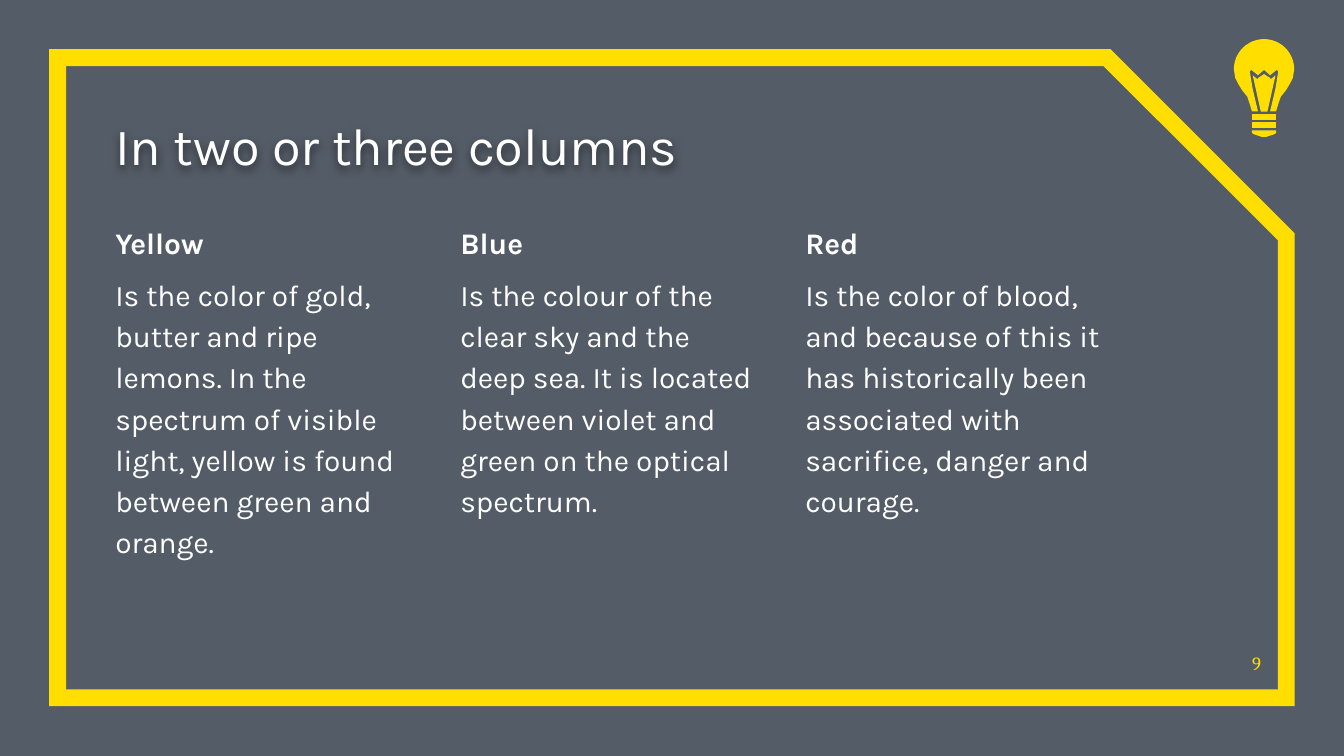
from dataclasses import dataclass
from math import cos, pi, sin

from lxml.etree import SubElement
from pptx import Presentation
from pptx.dml.color import RGBColor
from pptx.enum.shapes import MSO_SHAPE
from pptx.enum.text import MSO_ANCHOR, PP_ALIGN
from pptx.oxml.ns import qn
from pptx.util import Cm, Pt


@dataclass(frozen=True)
class Theme:
    backdrop = RGBColor(0xFF, 0xFF, 0xFF)
    veil = RGBColor(0x04, 0x0F, 0x20)
    veil_opacity = 68
    accent = RGBColor(0xFF, 0xDE, 0x00)
    text = RGBColor(0xFF, 0xFF, 0xFF)
    text_font = "Karla"
    number_font = "Cambria"
    title_size = Pt(28)
    body_size = Pt(16)
    number_size = Pt(10)
    frame_width = Pt(9)


@dataclass(frozen=True)
class Box:
    left: int
    top: int
    width: int
    height: int

    @classmethod
    def cm(cls, *lengths):
        return cls(*(Cm(length) for length in lengths))

    def bounds(self):
        return self.left, self.top, self.width, self.height


THEME = Theme()

COLUMNS = [
    ("Yellow", "Is the color of gold, butter and ripe lemons. In the spectrum of "
               "visible light, yellow is found between green and orange."),
    ("Blue", "Is the colour of the clear sky and the deep sea. It is located "
             "between violet and green on the optical spectrum."),
    ("Red", "Is the color of blood, and because of this it has historically been "
            "associated with sacrifice, danger and courage."),
]

# Left halves of the bulb's parts, on a grid 45 units wide
BULB_WIDTH = 45
RADIUS = BULB_WIDTH / 2
DOME = [(RADIUS - RADIUS * sin(step * pi / 24), RADIUS - RADIUS * cos(step * pi / 24))
        for step in range(13)]
GLASS = DOME + [(1, 29), (3, 33), (6, 38), (10, 43), (12, 49), (13.5, 54), (18, 54),
                (14, 37), (12, 25), (12, 24), (13, 23), (18, 27), (RADIUS, 23)]
FILAMENT = [(RADIUS, 26), (18, 29), (17.5, 30), (17, 29.5), (14, 27), (20, 54)]
BANDS = [[(13.5, top), (13.5, top + 4)] for top in (56, 62)]
CAP = [(13.5, 68), (13.5, 70), (15, 71), (21, 73)]


def set_format(target, values):
    for name, value in values.items():
        setattr(target, name, value)


def format_font(font, color, **values):
    set_format(font, values)
    font.color.rgb = color


def prepare_frame(frame, anchor):
    set_format(frame, dict(margin_left=0, margin_top=0, margin_right=0,
                           margin_bottom=0, word_wrap=True, vertical_anchor=anchor))


def fill_plain(shape, color):
    shape.shadow.inherit = False
    shape.fill.solid()
    shape.fill.fore_color.rgb = color
    shape.line.fill.background()


def add_veil(slide, box):
    """Tint the whole backdrop with a translucent dark layer."""
    veil = slide.shapes.add_shape(MSO_SHAPE.RECTANGLE, *box.bounds())
    fill_plain(veil, THEME.veil)
    tint = next(veil.element.iter(qn("a:srgbClr")))
    SubElement(tint, qn("a:alpha"), val=str(THEME.veil_opacity * 1000))


def add_border(slide, box):
    border = slide.shapes.add_shape(MSO_SHAPE.SNIP_1_RECTANGLE, *box.bounds())
    border.adjustments[0] = 0.28
    border.shadow.inherit = False
    border.fill.background()
    border.line.color.rgb = THEME.accent
    border.line.width = THEME.frame_width
    SubElement(border.element.spPr.find(qn("a:ln")), qn("a:miter"), lim="800000")


def place_title(slide, box, wording):
    title = slide.shapes.title
    title.element.getparent().append(title.element)  # in front of the backdrop
    set_format(title, dict(zip(("left", "top", "width", "height"), box.bounds())))
    title.text_frame.text = wording
    prepare_frame(title.text_frame, MSO_ANCHOR.BOTTOM)
    heading = title.text_frame.paragraphs[0]
    heading.alignment = PP_ALIGN.LEFT
    format_font(heading.font, THEME.text, name=THEME.text_font, size=THEME.title_size)
    effects = SubElement(title.element.spPr, qn("a:effectLst"))
    shadow = SubElement(effects, qn("a:outerShdw"), blurRad=str(Pt(4.5)),
                        dist=str(Pt(1.5)), dir="5400000", algn="bl", rotWithShape="0")
    shade = SubElement(shadow, qn("a:srgbClr"), val="000000")
    SubElement(shade, qn("a:alpha"), val="50000")


def add_column(slide, box, heading, description):
    frame = slide.shapes.add_textbox(*box.bounds()).text_frame
    prepare_frame(frame, MSO_ANCHOR.TOP)
    frame.text = f"{heading}\n{description}"
    for paragraph, bold in zip(frame.paragraphs, (True, False)):
        paragraph.line_spacing = 1.15
        format_font(paragraph.font, THEME.text, name=THEME.text_font,
                    size=THEME.body_size, bold=bold)
    frame.paragraphs[1].space_before = Pt(6)


def add_columns(slide, box, columns, gap):
    width = (box.width - gap * (len(columns) - 1)) // len(columns)
    for index, (heading, description) in enumerate(columns):
        left = box.left + index * (width + gap)
        add_column(slide, Box(left, box.top, width, box.height), heading, description)


def add_page_number(slide, box, number):
    frame = slide.shapes.add_textbox(*box.bounds()).text_frame
    prepare_frame(frame, MSO_ANCHOR.BOTTOM)
    frame.text = number
    frame.paragraphs[0].alignment = PP_ALIGN.RIGHT
    format_font(frame.paragraphs[0].font, THEME.accent, name=THEME.number_font,
                size=THEME.number_size)


def add_bulb(slide, box):
    """Draw each bulb part from its left half and the mirror image of it."""
    unit = box.width / BULB_WIDTH
    for half in (*BANDS, CAP, FILAMENT, GLASS):
        outline = half + [(BULB_WIDTH - x, y) for x, y in reversed(half)]
        points = [(box.left + x * unit, box.top + y * unit) for x, y in outline]
        builder = slide.shapes.build_freeform(*points[0])
        builder.add_line_segments(points[1:], close=True)
        fill_plain(builder.convert_to_shape(), THEME.accent)


def main():
    deck = Presentation()
    deck.slide_width, deck.slide_height = Cm(25.4), Cm(14.29)
    slide = deck.slides.add_slide(deck.slide_layouts[5])
    slide.background.fill.solid()
    slide.background.fill.fore_color.rgb = THEME.backdrop

    add_veil(slide, Box(0, 0, deck.slide_width, deck.slide_height))
    add_border(slide, Box.cm(1.09, 1.09, 23.22, 12.1))
    place_title(slide, Box.cm(2.18, 1.98, 18.67, 1.35), "In two or three columns")
    add_columns(slide, Box.cm(2.18, 4.14, 18.65, 7.9), COLUMNS, Cm(0.91))
    add_page_number(slide, Box.cm(23.14, 12.04, 0.69, 0.71), "9")
    add_bulb(slide, Box.cm(23.32, 0.74, 1.14, 1.85))
    deck.save("out.pptx")


if __name__ == "__main__":
    main()
